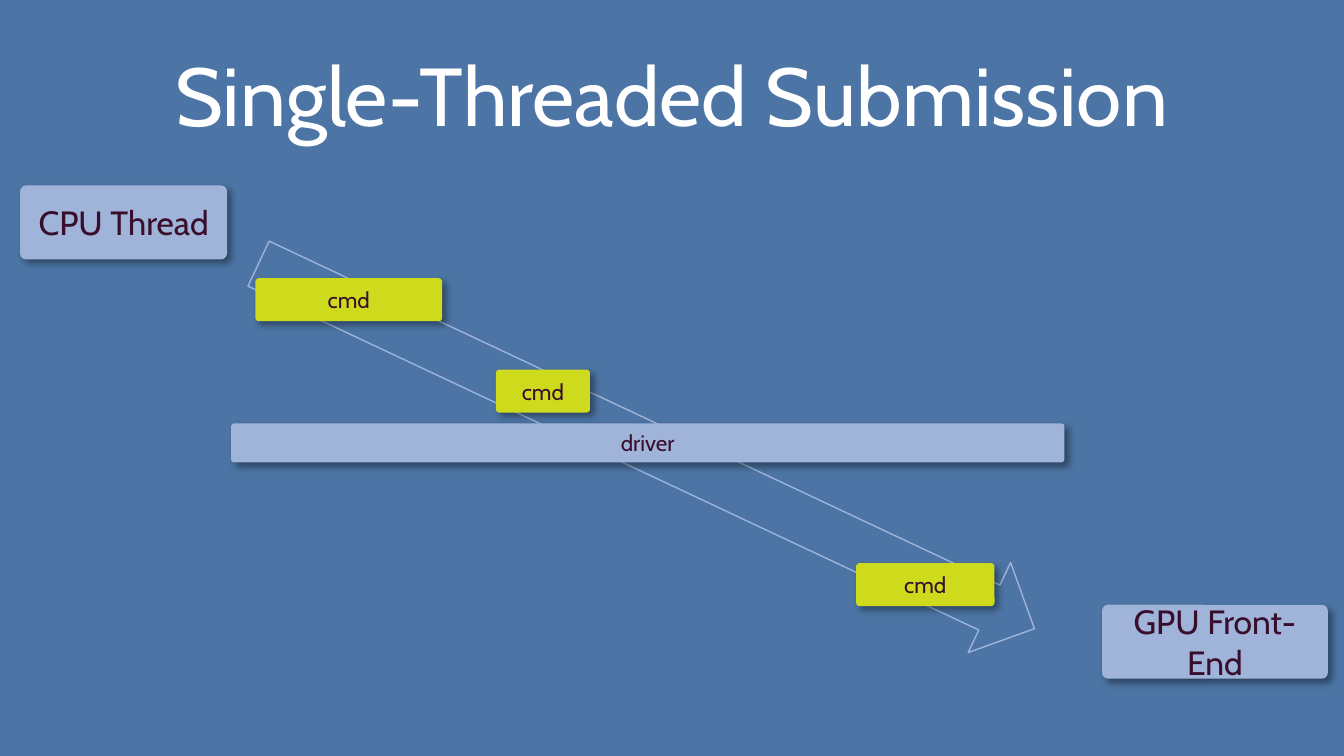
from lxml.etree import SubElement
from pptx import Presentation
from pptx.dml.color import RGBColor
from pptx.enum.shapes import MSO_SHAPE
from pptx.enum.text import MSO_ANCHOR, PP_ALIGN
from pptx.oxml.ns import qn
from pptx.util import Inches, Pt

COLORS = {
    "background": "4C75A5",
    "title": "FFFFFF",
    "stage": "A0B3D8",
    "command": "CDDB1C",
    "label": "380E2C",
    "shadow": "000000",
}
SLIDE_FORMAT = {"slide_width": Inches(10), "slide_height": Inches(10) * 9 // 16}
FRAME_FORMAT = {"word_wrap": True, "vertical_anchor": MSO_ANCHOR.MIDDLE}
COMMAND_HEIGHT = 0.32


def color(name):
    return RGBColor.from_string(COLORS[name])


def apply_format(target, values):
    for name, value in values.items():
        setattr(target, name, value)


def write_text(shape, text, size, color_name):
    frame = shape.text_frame
    apply_format(frame, FRAME_FORMAT)
    para = frame.paragraphs[0]
    para.alignment = PP_ALIGN.CENTER
    span = para.add_run()
    span.text = text
    apply_format(span.font, {"name": "Cabin", "size": Pt(size), "bold": False})
    span.font.color.rgb = color(color_name)


def add_title(page, text):
    title = page.shapes.title
    apply_format(title, {
        "left": Inches(0.5),
        "top": Inches(0.23),
        "width": Inches(9),
        "height": Inches(0.94),
    })
    write_text(title, text, 44, "title")


def add_shadow(shape):
    shape.shadow.inherit = False
    effects = shape._element.spPr.find(qn("a:effectLst"))
    shadow = SubElement(effects, qn("a:outerShdw"), {
        "blurRad": str(Pt(4)),
        "dist": str(Pt(3)),
        "dir": str(45 * 60000),
        "algn": "tl",
        "rotWithShape": "0",
    })
    tint = SubElement(shadow, qn("a:srgbClr"), val=COLORS["shadow"])
    SubElement(tint, qn("a:alpha"), val="40000")


def add_box(page, text, left, top, width, height, size, fill):
    box = page.shapes.add_shape(
        MSO_SHAPE.ROUNDED_RECTANGLE,
        Inches(left), Inches(top), Inches(width), Inches(height),
    )
    box.adjustments[0] = 0.08
    box.fill.solid()
    box.fill.fore_color.rgb = color(fill)
    box.line.fill.background()
    add_shadow(box)
    write_text(box, text, size, "label")


def add_flow_arrow(page):
    arrow = page.shapes.add_shape(
        MSO_SHAPE.DOWN_ARROW,
        Inches(4.44), Inches(0.13), Inches(0.74), Inches(6.38),
    )
    arrow.rotation = 295.2
    arrow.shadow.inherit = False
    arrow.fill.background()
    arrow.line.color.rgb = color("stage")
    arrow.line.width = Pt(0.75)


def main():
    deck = Presentation()
    apply_format(deck, SLIDE_FORMAT)
    page = deck.slides.add_slide(deck.slide_layouts[5])
    page.background.fill.solid()
    page.background.fill.fore_color.rgb = color("background")

    add_flow_arrow(page)
    add_title(page, "Single-Threaded Submission")
    add_box(page, "CPU Thread", 0.15, 1.38, 1.54, 0.55, 18, "stage")
    add_box(page, "GPU Front-End", 8.2, 4.5, 1.68, 0.55, 18, "stage")
    for left, top, width in [(6.37, 4.19, 1.03), (3.69, 2.75, 0.7), (1.9, 2.07, 1.39)]:
        add_box(page, "cmd", left, top, width, COMMAND_HEIGHT, 12, "command")
    add_box(page, "driver", 1.72, 3.15, 6.2, 0.29, 12, "stage")

    deck.save("out.pptx")


if __name__ == "__main__":
    main()
